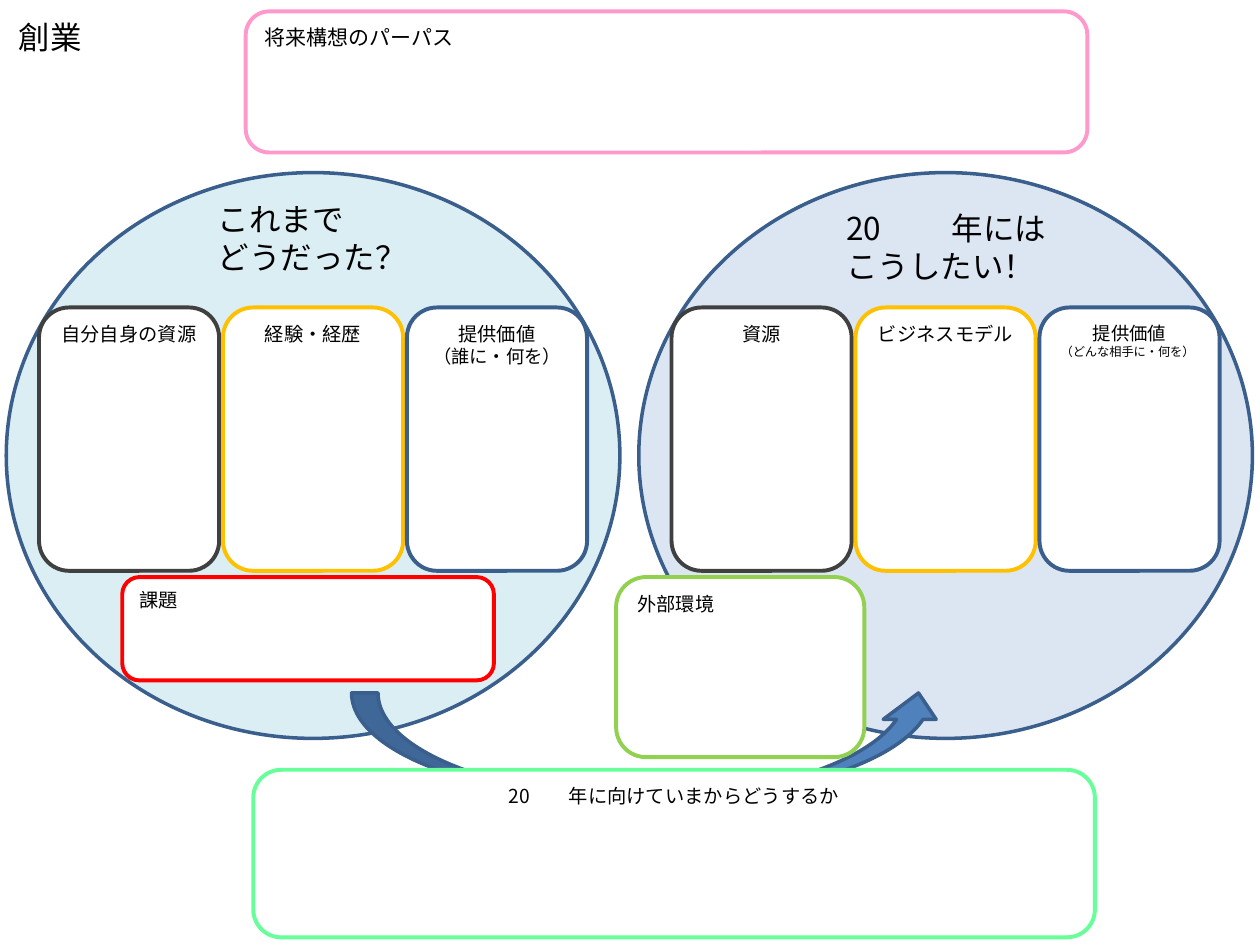
import pptx
import pptx.dml.color
import pptx.enum.shapes
import pptx.enum.text
import pptx.oxml
import pptx.oxml.ns
import pptx.util

Inches = pptx.util.Inches
SHAPES = pptx.enum.shapes.MSO_SHAPE
ALIGN = pptx.enum.text.PP_ALIGN
JAPANESE = "Noto Sans CJK JP"
BLUE = "3A5F8C"


def color(value):
    """Turn a hex string into a colour."""
    return pptx.dml.color.RGBColor.from_string(value)


def add_outline(slide, kind, box, line, fill=None, width=2):
    """Add a preset shape with a flat fill and a coloured outline."""
    shape = slide.shapes.add_shape(kind, *[Inches(length) for length in box])
    shape.shadow.inherit = False
    if fill:
        shape.fill.solid()
        shape.fill.fore_color.rgb = color(fill)
    else:
        shape.fill.background()
    shape.line.color.rgb = color(line)
    shape.line.width = pptx.util.Pt(width)
    return shape


def write(shape, text, sizes, alignments, font=JAPANESE):
    """Write lines of text, each with its own size and alignment."""
    text_frame = shape.text_frame
    text_frame.text = text
    for paragraph, size, alignment in zip(text_frame.paragraphs, sizes, alignments):
        paragraph.alignment = alignment
        for run in paragraph.runs:
            run.font.size = pptx.util.Pt(size)
            run.font.color.rgb = color("000000")
            run.font.name = font
            east_asian = pptx.oxml.parse_xml(
                f'<a:ea {pptx.oxml.ns.nsdecls("a")} typeface="{JAPANESE}"/>')
            run.font._element.find(pptx.oxml.ns.qn("a:latin")).addnext(east_asian)


def add_heading(slide, box, text, font=JAPANESE):
    """Add a large unwrapped heading."""
    shape = slide.shapes.add_textbox(*[Inches(length) for length in box])
    shape.text_frame.word_wrap = False
    shape.text_frame.auto_size = pptx.enum.text.MSO_AUTO_SIZE.SHAPE_TO_FIT_TEXT
    write(shape, text, (18, 18), (ALIGN.LEFT, ALIGN.LEFT), font)


def add_panel(slide, box, line, text, sizes=(11,), alignments=(ALIGN.LEFT,), fill="FFFFFF"):
    """Add a rounded panel with its label at the top."""
    shape = add_outline(slide, SHAPES.ROUNDED_RECTANGLE, box, line, fill, 2.25)
    shape.text_frame.word_wrap = True
    shape.text_frame.vertical_anchor = pptx.enum.text.MSO_ANCHOR.TOP
    write(shape, text, sizes, alignments)


def add_period(slide, box, fill, heading, heading_box, columns):
    """Add a circle holding a heading and three columns."""
    left, top, _, _ = box
    add_outline(slide, SHAPES.OVAL, box, BLUE, fill)
    x, y, width, height = heading_box
    add_heading(slide, (left + x, top + y, width, height), heading)
    for index, (line, column) in enumerate(zip(("404040", "FFC000", BLUE), columns)):
        column_box = (left + 0.26 + index * 1.46, top + 1.07, 1.43, 2.09)
        add_panel(slide, column_box, line, *column)


def main():
    """Build the founding plan slide."""
    presentation = pptx.Presentation()
    presentation.slide_width = Inches(10)
    presentation.slide_height = Inches(7.5)
    slide = presentation.slides.add_slide(presentation.slide_layouts[6])

    center = (ALIGN.CENTER,)
    add_period(slide, (5.07, 1.37, 4.87, 4.49), "DCE6F2",
               "20\u3000 \u3000年には\nこうしたい！".replace("\u3000", "　"),
               (1.55, 0.24, 1.86, 0.71),
               [("資源", (11,), center),
                ("ビジネスモデル", (11,), center),
                ("提供価値\n（どんな相手に・何を）", (10.5, 7), (ALIGN.CENTER, ALIGN.LEFT))])
    add_period(slide, (0.05, 1.37, 4.87, 4.49), "DBEEF4",
               "これまで\nどうだった？", (1.58, 0.17, 1.72, 0.71),
               [("自分自身の資源", (11,), center),
                ("経験・経歴", (11,), center),
                ("提供価値\n（誰に・何を）", (11, 10.5), center * 2)])

    add_outline(slide, SHAPES.CURVED_UP_ARROW, (2.79, 5.5, 4.71, 0.84), BLUE, "4F81BD")
    add_panel(slide, (1.95, 0.09, 6.68, 1.12), "FF99CC", "将来構想のパーパス", (12,), fill=None)
    add_panel(slide, (2.01, 6.11, 6.68, 1.33), "66FF99",
              "20　　年に向けていまからどうするか", alignments=center)
    add_panel(slide, (4.89, 4.58, 1.97, 1.43), "92D050", "外部環境")
    add_panel(slide, (0.97, 4.58, 2.95, 0.82), "FF0000", "課題")
    add_heading(slide, (0.05, 0.09, 0.71, 0.4), "創業", "Calibri")
    presentation.save("out.pptx")


if __name__ == "__main__":
    main()
